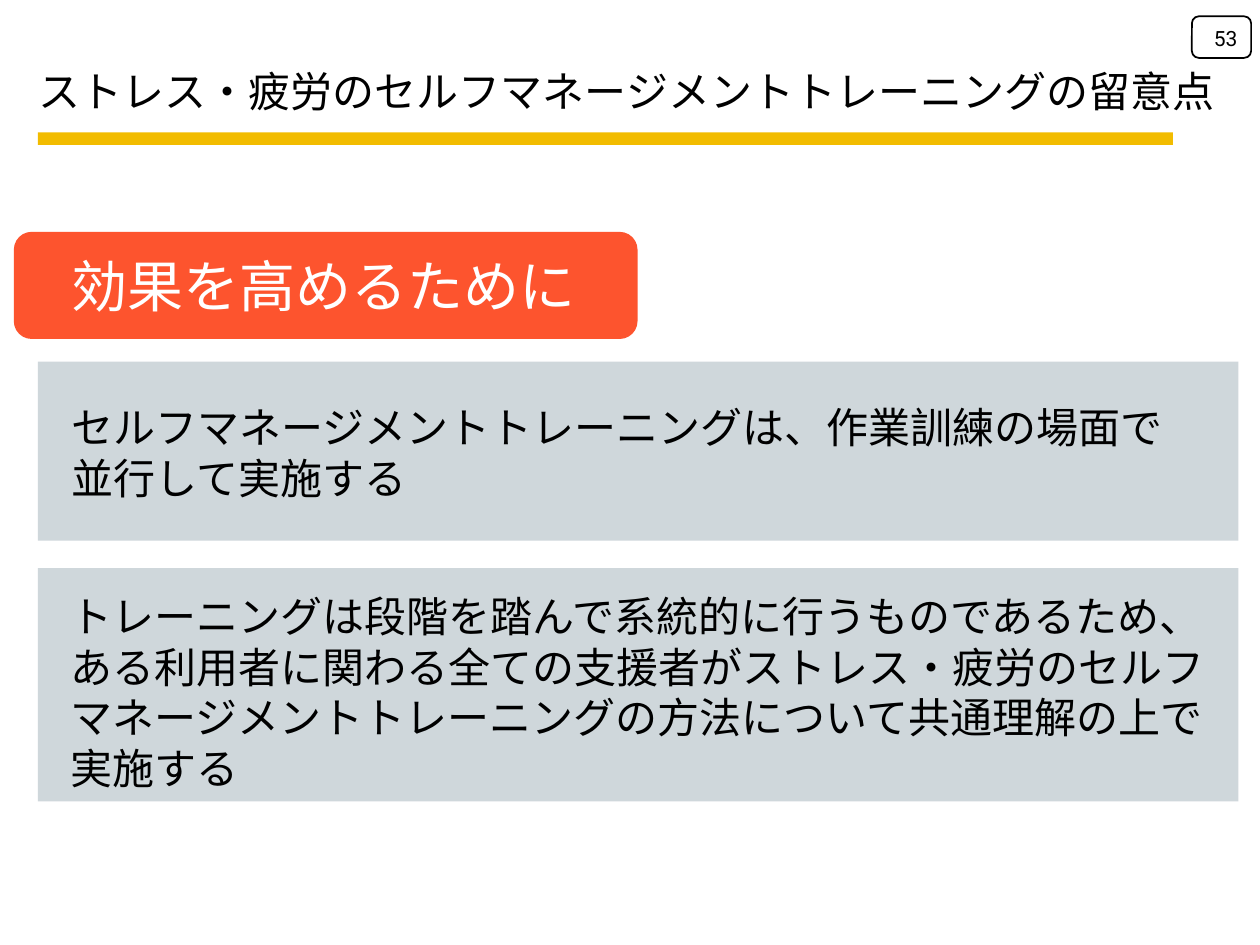
from pptx import Presentation
from pptx.dml.color import RGBColor
from pptx.enum.shapes import MSO_SHAPE as SHAPE
from pptx.enum.text import MSO_ANCHOR as ANCHOR, PP_ALIGN as ALIGN
from pptx.util import Inches, Pt
from lxml import etree

BLACK = RGBColor(0x00, 0x00, 0x00)
WHITE = RGBColor(0xFF, 0xFF, 0xFF)
ORANGE = RGBColor(0xFD, 0x54, 0x2E)
GRAY = RGBColor(0xCF, 0xD7, 0xDB)
YELLOW = RGBColor(0xF2, 0xBC, 0x00)
JP_FONT = "Noto Sans CJK JP"
A_NS = "http://schemas.openxmlformats.org/drawingml/2006/main"

prs = Presentation()
prs.slide_width, prs.slide_height = Inches(10), Inches(7.5)
slide = prs.slides.add_slide(prs.slide_layouts[6])


def add_box(kind, left, top, width, height, fill, line=None):
    sp = slide.shapes.add_shape(kind, Inches(left), Inches(top), Inches(width), Inches(height))
    sp.shadow.inherit = False
    sp.fill.solid()
    sp.fill.fore_color.rgb = fill
    if line is None:
        sp.line.fill.background()
    else:
        sp.line.color.rgb = line
        sp.line.width = Pt(1)


def add_text(text, left, top, width, height, size=24, font=JP_FONT, color=BLACK,
             wrap=True, align=ALIGN.LEFT, anchor=ANCHOR.TOP):
    sp = slide.shapes.add_textbox(Inches(left), Inches(top), Inches(width), Inches(height))
    tf = sp.text_frame
    tf.word_wrap = wrap
    tf.vertical_anchor = anchor
    p = tf.paragraphs[0]
    p.alignment = align
    r = p.add_run()
    r.text = text
    r.font.size = Pt(size)
    r.font.name = font
    r.font.color.rgb = color
    # East Asian characters take their typeface from a:ea
    etree.SubElement(r.font._element, f"{{{A_NS}}}ea", typeface=font)


# Title and rule
add_text("ストレス・疲労のセルフマネージメントトレーニングの留意点", 0.21, 0.47, 9.58, 0.5)
add_box(SHAPE.RECTANGLE, 0.3, 1.05, 9.01, 0.1, YELLOW)

# Heading
add_box(SHAPE.ROUNDED_RECTANGLE, 0.11, 1.84, 4.95, 0.85, ORANGE)
add_text("効果を高めるために", 0.47, 1.95, 4.24, 0.64, size=32, color=WHITE, wrap=False)

# Points: panel top and height, then text and its left, top, width and height
points = [
    (2.87, 1.42, "セルフマネージメントトレーニングは、作業訓練の場面で　並行して実施する",
     (0.47, 3.14, 9.43, 0.91)),
    (4.51, 1.85, "トレーニングは段階を踏んで系統的に行うものであるため、"
     "ある利用者に関わる全ての支援者がストレス・疲労のセルフマネージメントトレーニングの"
     "方法について共通理解の上で実施する",
     (0.46, 4.64, 9.29, 1.72)),
]
for top, height, text, place in points:
    add_box(SHAPE.RECTANGLE, 0.3, top, 9.53, height, GRAY)
    add_text(text, *place)

# Page number
add_box(SHAPE.ROUNDED_RECTANGLE, 9.46, 0.13, 0.47, 0.33, WHITE, line=BLACK)
add_text("53", 9.35, 0.1, 0.57, 0.4, size=12, font="Roboto",
         align=ALIGN.RIGHT, anchor=ANCHOR.MIDDLE)

prs.save("out.pptx")
